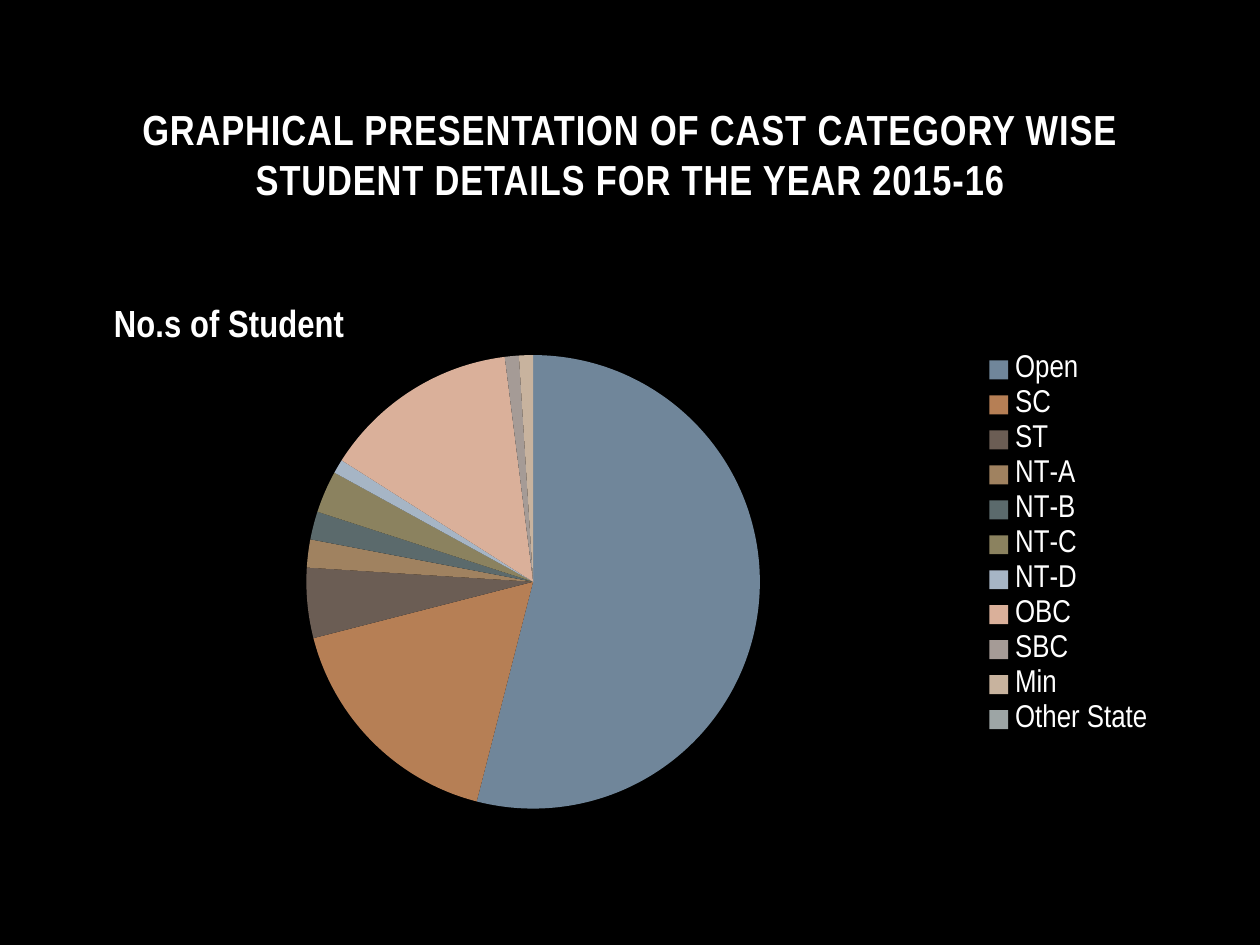
from pptx import Presentation
from pptx.chart.data import CategoryChartData
from pptx.dml.color import RGBColor
from pptx.enum.chart import XL_CHART_TYPE, XL_LEGEND_POSITION
from pptx.enum.text import MSO_ANCHOR, PP_ALIGN
from pptx.oxml import parse_xml
from pptx.oxml.ns import nsdecls, qn
from pptx.util import Cm, Pt


def style(font, size, bold=False):
    font.name = "Arial Narrow"
    font.size = Pt(size)
    font.bold = bold
    font.color.rgb = RGBColor.from_string("FFFFFF")


def place(element, before, target="", **box):
    inner = f'<c:layoutTarget val="{target}"/>' if target else ""
    inner += "".join(f'<c:{k}Mode val="edge"/>' for k in "xy")
    inner += "".join(f'<c:{k} val="{v}"/>' for k, v in box.items())
    for old in element.findall(qn("c:layout")):
        element.remove(old)
    layout = parse_xml(f'<c:layout {nsdecls("c")}><c:manualLayout>{inner}</c:manualLayout></c:layout>')
    nxt = element.find(qn(before))
    nxt.addprevious(layout)


prs = Presentation()
prs.slide_width, prs.slide_height = Cm(25.4), Cm(19.05)
s = prs.slides.add_slide(prs.slide_layouts[6])
s.background.fill.solid()
s.background.fill.fore_color.rgb = RGBColor.from_string("000000")

sp = s.shapes.add_textbox(Cm(1.7), Cm(1.07), Cm(22.02), Cm(3.17))
tf = sp.text_frame
tf.word_wrap = True
tf.vertical_anchor = MSO_ANCHOR.BOTTOM
p = tf.paragraphs[0]
p.alignment = PP_ALIGN.CENTER
r = p.add_run()
r.text = "GRAPHICAL PRESENTATION OF CAST CATEGORY WISE STUDENT DETAILS FOR THE YEAR 2015-16"
style(p.font, 24, True)
r.font._element.set("spc", "50")

students = [
    ("Open", 54, "70869A"),
    ("SC", 17, "B67F55"),
    ("ST", 5, "6B5D54"),
    ("NT-A", 2, "A08260"),
    ("NT-B", 2, "5B6A6C"),
    ("NT-C", 3, "8B825F"),
    ("NT-D", 1, "A6B5C5"),
    ("OBC", 14, "DAB09A"),
    ("SBC", 1, "A59B96"),
    ("Min", 1, "C8B39E"),
    ("Other State", 0, "9DA5A5"),
]
data = CategoryChartData()
data.categories = [name for name, _, _ in students]
data.add_series("No.s of Student", [value for _, value, _ in students])
chart = s.shapes.add_chart(XL_CHART_TYPE.PIE, Cm(1.5), Cm(5.33), Cm(22.02), Cm(11.43), data).chart
style(chart.font, 18)

chart.has_title = True
title = chart.chart_title
title.text_frame.text = "No.s of Student"
style(title.text_frame.paragraphs[0].font, 21.6, True)
title.include_in_layout = True
place(title._element, "c:overlay", x=0.03, y=0.06)

chart.has_legend = True
legend = chart.legend
legend.position = XL_LEGEND_POSITION.RIGHT
legend.include_in_layout = False
style(legend.font, 18)
place(legend._element, "c:overlay", x=0.83, y=0.15, w=0.16, h=0.69)

plot = chart.plots[0]
plot.vary_by_categories = True
place(plot._element.getparent(), "c:pieChart", "inner", x=0.21, y=0.16, w=0.42, h=0.8)
for i, (_, _, color) in enumerate(students):
    fill = plot.series[0].points[i].format.fill
    fill.solid()
    fill.fore_color.rgb = RGBColor.from_string(color)

prs.save("out.pptx")
